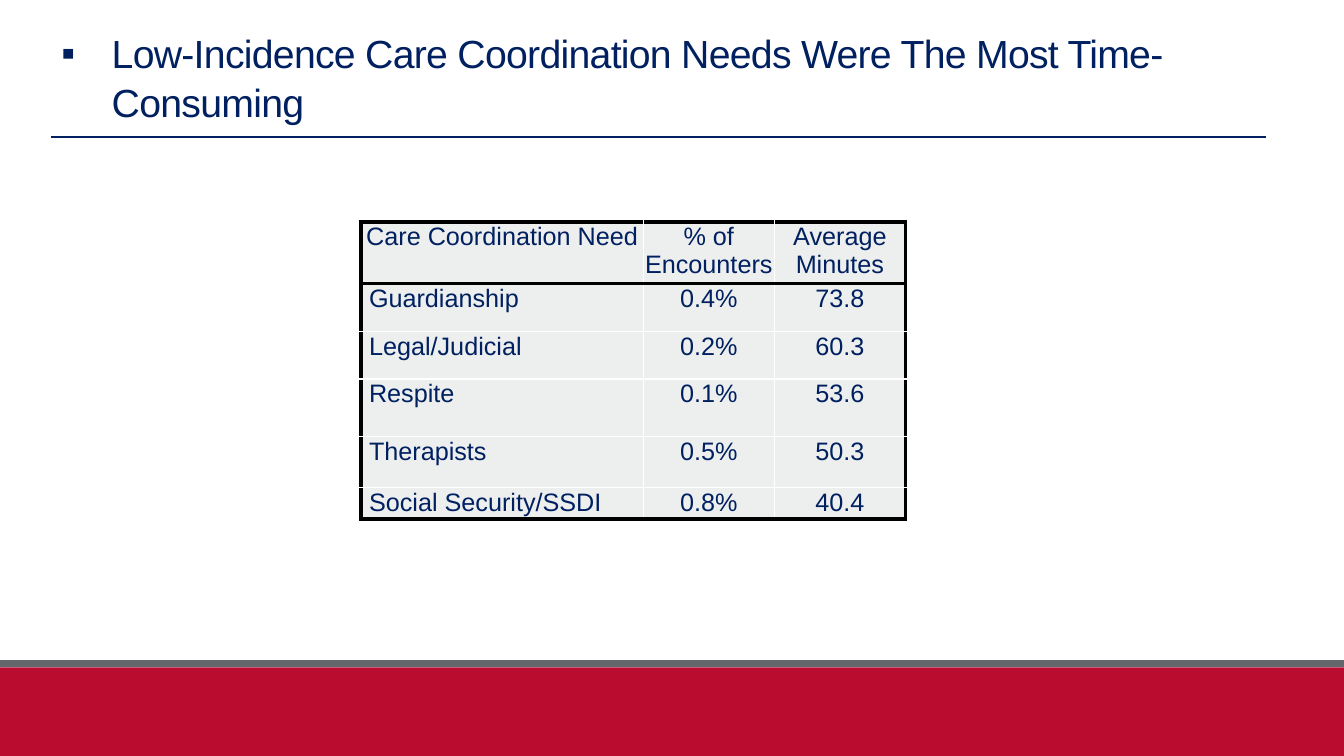
from lxml import etree
from pptx import Presentation
from pptx.dml.color import RGBColor
from pptx.enum import shapes, text
from pptx.oxml import ns
from pptx.util import Inches, Pt

NAVY, CRIMSON, GREY = "002060", "BA0C2F", "63666A"
PALE, WHITE, BLACK = "EDEEEE", "FFFFFF", "000000"

NEEDS = [
    ("Care Coordination Need", "% of Encounters", "Average Minutes"),
    ("Guardianship", "0.4%", "73.8"),
    ("Legal/Judicial", "0.2%", "60.3"),
    ("Respite", "0.1%", "53.6"),
    ("Therapists", "0.5%", "50.3"),
    ("Social Security/SSDI", "0.8%", "40.4"),
]
COLUMN_WIDTHS = [2.8, 1.3, 1.3]
ROW_HEIGHTS = [0.57, 0.48, 0.47, 0.57, 0.51, 0.3]


def color(value):
    return RGBColor.from_string(value)


def add_xml(parent, tag, **attributes):
    return etree.SubElement(parent, ns.qn(tag), attributes)


class SlideBuilder:
    font = "Arial"

    def __init__(self, slide):
        self.slide = slide

    def band(self, top, height, fill):
        band = self.slide.shapes.add_shape(
            shapes.MSO_SHAPE.RECTANGLE, 0, Inches(top), Inches(13.33), Inches(height))
        band.shadow.inherit = False
        band.fill.solid()
        band.fill.fore_color.rgb = color(fill)
        band.line.fill.background()

    def rule(self, left, right, top):
        rule = self.slide.shapes.add_connector(
            shapes.MSO_CONNECTOR.STRAIGHT,
            Inches(left), Inches(top), Inches(right), Inches(top))
        rule.line.color.rgb = color(NAVY)
        rule.line.width = Pt(1)
        add_xml(rule._element.spPr, "a:effectLst")

    def run(self, paragraph, words, size):
        run = paragraph.add_run()
        run.text = words
        run.font.name = self.font
        run.font.size = Pt(size)
        run.font.color.rgb = color(NAVY)
        return run

    def title(self, words, left, top, width, height):
        box = self.slide.shapes.add_textbox(
            Inches(left), Inches(top), Inches(width), Inches(height))
        frame = box.text_frame
        frame.word_wrap = True
        frame.vertical_anchor = text.MSO_ANCHOR.BOTTOM
        paragraph = frame.paragraphs[0]
        paragraph.line_spacing = 1.04
        properties = paragraph._p.get_or_add_pPr()
        properties.set("marL", str(Inches(0.5)))
        properties.set("indent", str(-Inches(0.5)))
        add_xml(properties, "a:buFont", typeface=self.font)
        add_xml(properties, "a:buChar", char="▪")
        run = self.run(paragraph, words, 28)
        run.font._element.set("spc", "-50")

    def borders(self, cell, **edges):
        properties = cell._tc.get_or_add_tcPr()
        for edge in "LRTB":
            stroke, width = edges[edge]
            line = add_xml(properties, f"a:ln{edge}", w=str(Pt(width)))
            add_xml(add_xml(line, "a:solidFill"), "a:srgbClr", val=stroke)

    def table(self, rows, left, top, widths, heights):
        table = self.slide.shapes.add_table(
            len(rows), len(widths), Inches(left), Inches(top),
            Inches(sum(widths)), Inches(sum(heights))).table
        for column, width in zip(table.columns, widths):
            column.width = Inches(width)
        for row, height in zip(table.rows, heights):
            row.height = Inches(height)
        frame, divider, inner = (BLACK, 3), (BLACK, 2.25), (WHITE, 1)
        last_row, last_column = len(rows) - 1, len(widths) - 1
        horizontal = [frame, divider] + [inner] * (last_row - 1) + [frame]
        vertical = [frame] + [inner] * last_column + [frame]
        for r, values in enumerate(rows):
            for c, value in enumerate(values):
                cell = table.cell(r, c)
                is_need = r > 0 and c == 0
                cell.margin_left = Inches(0.08 if is_need else 0.01)
                cell.margin_right = cell.margin_top = Inches(0.01)
                cell.margin_bottom = 0
                self.borders(cell, L=vertical[c], R=vertical[c + 1],
                             T=horizontal[r], B=horizontal[r + 1])
                cell.fill.solid()
                cell.fill.fore_color.rgb = color(PALE)
                paragraph = cell.text_frame.paragraphs[0]
                paragraph.alignment = (
                    text.PP_ALIGN.LEFT if is_need else text.PP_ALIGN.CENTER)
                self.run(paragraph, value, 18)


def main():
    deck = Presentation()
    deck.slide_width, deck.slide_height = Inches(13.33), Inches(7.5)
    builder = SlideBuilder(deck.slides.add_slide(deck.slide_layouts[6]))
    builder.band(6.62, 0.88, CRIMSON)
    builder.band(6.55, 0.07, GREY)
    builder.title("Low-Incidence Care Coordination Needs Were The Most Time-Consuming",
                  0.51, 0.4, 12.74, 0.89)
    builder.rule(0.51, 12.56, 1.36)
    builder.table(NEEDS, 3.58, 2.2, COLUMN_WIDTHS, ROW_HEIGHTS)
    deck.save("out.pptx")


if __name__ == "__main__":
    main()
